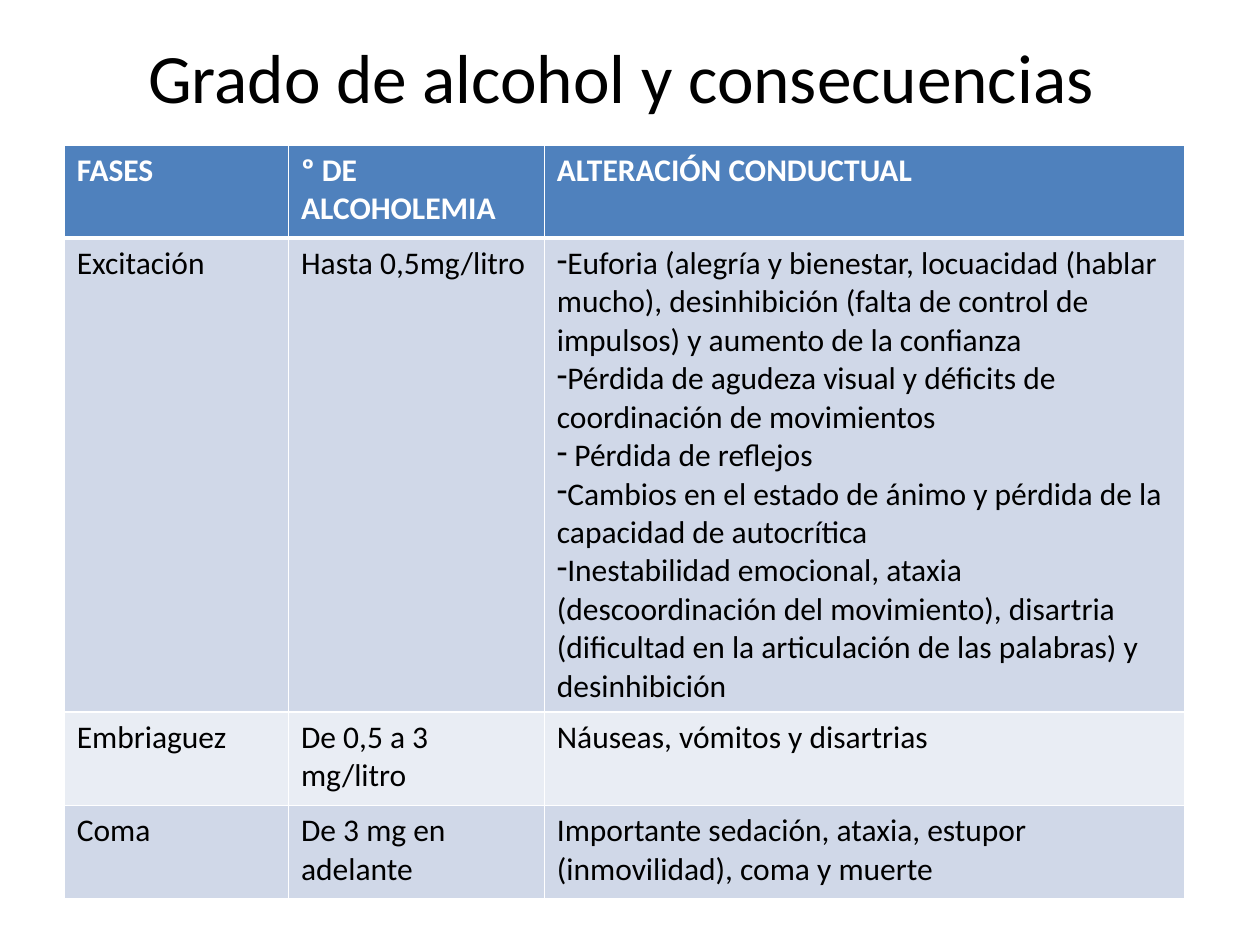
from lxml import etree
from pptx import Presentation
from pptx.dml.color import RGBColor
from pptx.enum import text as t
from pptx.oxml import ns
from pptx.util import Inches, Pt

COLORS = {"header": "4F81BD", "odd": "D0D8E8", "even": "E9EDF4",
          "white": "FFFFFF", "black": "000000"}
COLUMN_WIDTHS = [1.78, 2.03, 5.08]
ROW_HEIGHTS = [0.74, 3.7, 0.74, 0.74]
PHASES = [
    ["FASES", "º DE ALCOHOLEMIA", "ALTERACIÓN CONDUCTUAL"],
    ["Excitación", "Hasta 0,5mg/litro", [
        "Euforia (alegría y bienestar, locuacidad (hablar mucho), desinhibición "
        "(falta de control de impulsos) y aumento de la confianza",
        "Pérdida de agudeza visual y déficits de coordinación de movimientos",
        " Pérdida de reflejos",
        "Cambios en el estado de ánimo y pérdida de la capacidad de autocrítica",
        "Inestabilidad emocional, ataxia (descoordinación del movimiento), disartria "
        "(dificultad en la articulación de las palabras) y desinhibición"]],
    ["Embriaguez", "De 0,5 a 3 mg/litro", "Náuseas, vómitos y disartrias"],
    ["Coma", "De 3 mg en adelante",
     "Importante sedación, ataxia, estupor (inmovilidad), coma y muerte"],
]


def write(paragraph, content, size=18, color="black", bold=False, align=None, bullet=None):
    """Add formatted text to a paragraph, optionally with a bullet character."""
    run = paragraph.add_run()
    run.text = content
    run.font.name = "Calibri"
    run.font.size = Pt(size)
    run.font.bold = bold
    run.font.color.rgb = RGBColor.from_string(COLORS[color])
    paragraph.alignment = align
    if bullet:
        properties = paragraph._p.get_or_add_pPr()
        properties.set("marL", "0")
        properties.set("indent", "0")
        etree.SubElement(properties, ns.qn("a:buFontTx"))
        etree.SubElement(properties, ns.qn("a:buChar")).set("char", bullet)


def set_borders(cell, top=1, bottom=1):
    """Draw white borders round a cell, with widths in points."""
    properties = cell._tc.get_or_add_tcPr()
    sides = {"L": 1, "R": 1, "T": top, "B": bottom}
    for position, (side, width) in enumerate(sides.items()):
        line = etree.Element(ns.qn(f"a:ln{side}"), w=str(Pt(width)))
        fill = etree.SubElement(line, ns.qn("a:solidFill"))
        etree.SubElement(fill, ns.qn("a:srgbClr")).set("val", COLORS["white"])
        properties.insert(position, line)


def fill_cell(cell, content, row):
    """Write a cell and style it according to its row."""
    header = row == 0
    band = "header" if header else "odd" if row % 2 else "even"
    cell.fill.solid()
    cell.fill.fore_color.rgb = RGBColor.from_string(COLORS[band])
    set_borders(cell, top=3 if row == 1 else 1, bottom=3 if header else 1)
    listed = isinstance(content, list)
    for index, item in enumerate(content if listed else [content]):
        frame = cell.text_frame
        paragraph = frame.add_paragraph() if index else frame.paragraphs[0]
        write(paragraph, item, color="white" if header else "black", bold=header,
              bullet="-" if listed else None)


def add_title(slide, content):
    """Place and write the slide title."""
    title = slide.shapes.title
    title.left, title.top = Inches(0.43), Inches(0.21)
    title.width, title.height = Inches(9), Inches(0.79)
    title.text_frame.vertical_anchor = t.MSO_ANCHOR.MIDDLE
    write(title.text_frame.paragraphs[0], content, size=39.6, align=t.PP_ALIGN.CENTER)


def add_phases(slide):
    """Add the table of intoxication phases."""
    phases = slide.shapes.add_table(
        len(PHASES), len(COLUMN_WIDTHS), Inches(0.51), Inches(1.15),
        Inches(sum(COLUMN_WIDTHS)), Inches(sum(ROW_HEIGHTS))).table
    for column, width in zip(phases.columns, COLUMN_WIDTHS):
        column.width = Inches(width)
    for row, (height, contents) in enumerate(zip(ROW_HEIGHTS, PHASES)):
        phases.rows[row].height = Inches(height)
        for column, content in enumerate(contents):
            fill_cell(phases.cell(row, column), content, row)


def main():
    """Build and save the slide."""
    deck = Presentation()
    deck.slide_width, deck.slide_height = Inches(10), Inches(7.5)
    slide = deck.slides.add_slide(deck.slide_layouts[5])
    add_title(slide, "Grado de alcohol y consecuencias")
    add_phases(slide)
    deck.save("out.pptx")


if __name__ == "__main__":
    main()
